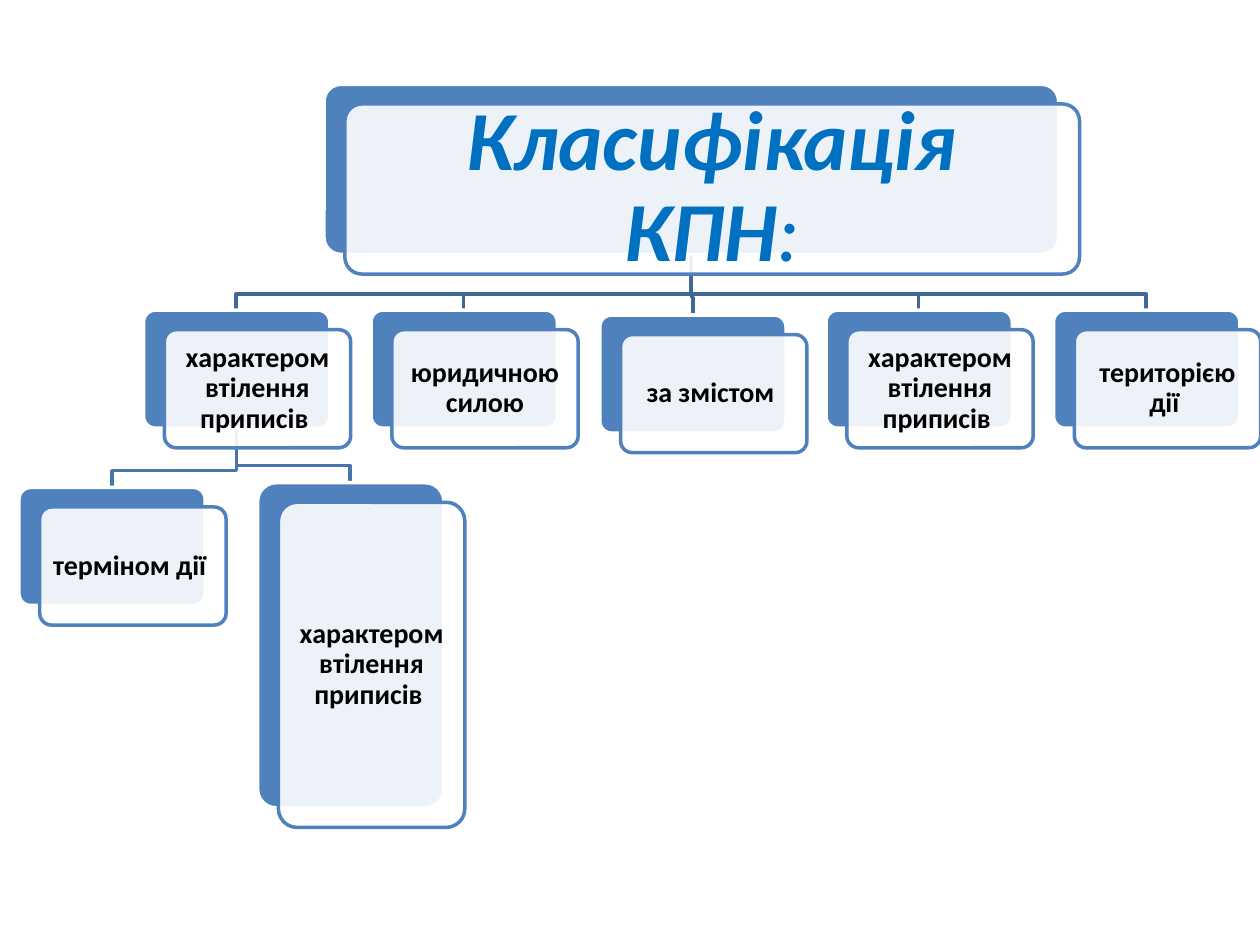
import pptx
import pptx.util
import pptx.dml.color
import pptx.enum.shapes
import pptx.enum.text
import pptx.oxml.ns
import lxml.etree

Pt = pptx.util.Pt
RGB = pptx.dml.color.RGBColor
BLUE = RGB(0x4F, 0x81, 0xBD)
DARK = RGB(0x3F, 0x67, 0x97)
MID = RGB(0x48, 0x75, 0xAC)
TITLE = RGB(0x00, 0x70, 0xC0)
WHITE = RGB(0xFF, 0xFF, 0xFF)
BLACK = RGB(0x00, 0x00, 0x00)

WIDE, HIGH = 106.5, 67.5
SHIFT = (11.9, 11.2)
FIRST, STEP, ROW = 82, 130, 177.2
ROOT = (395.1, 145.4)
KINDS = ["характером втілення приписів ", "юридичною силою", "за змістом ",
         "характером втілення приписів ", "територією дії "]
TERMS = [("терміном дії ", 10.8, 278.5, HIGH),
         ("характером втілення приписів ", 147.2, 275.8, 185.8)]


def apply(item, form):
    for name, value in form.items():
        setattr(item, name, value)


def draw_line(slide, start, end, color):
    (x, y), (to_x, to_y) = start, end
    turn = to_y - 9.7
    path = slide.shapes.build_freeform(x, y, scale=Pt(1))
    path.add_line_segments([(x, turn), (to_x, turn), end], close=False)
    line = path.convert_to_shape()
    line.shadow.inherit = False
    line.fill.background()
    line.line.color.rgb = color
    line.line.width = Pt(2)


def draw_card(slide, place, fill, edge, alpha=None):
    kind = pptx.enum.shapes.MSO_SHAPE.ROUNDED_RECTANGLE
    card = slide.shapes.add_shape(kind, *map(Pt, place))
    card.adjustments[0] = 0.1
    card.shadow.inherit = False
    card.fill.solid()
    card.fill.fore_color.rgb = fill
    card.line.color.rgb = edge
    card.line.width = Pt(2)
    if alpha:
        tint = card.fill._xPr.find(".//" + pptx.oxml.ns.qn("a:srgbClr"))
        node = lxml.etree.SubElement(tint, pptx.oxml.ns.qn("a:alpha"))
        node.set("val", str(alpha * 1000))


def draw_text(slide, place, runs, size, color):
    frame = slide.shapes.add_textbox(*map(Pt, place)).text_frame
    gap = Pt(0.3 * size)
    apply(frame, {"word_wrap": True,
                  "vertical_anchor": pptx.enum.text.MSO_ANCHOR.MIDDLE,
                  "margin_left": gap, "margin_right": gap,
                  "margin_top": gap, "margin_bottom": gap})
    para = frame.paragraphs[0]
    apply(para, {"alignment": pptx.enum.text.PP_ALIGN.CENTER, "line_spacing": 0.9})
    for text, form in runs:
        run = para.add_run()
        run.text = text
        apply(run.font, {"name": "Calibri", "size": Pt(size), **form})
        run.font.color.rgb = color


def draw_node(slide, place, runs, size=16, color=BLACK):
    x, y, wide, high = place
    draw_card(slide, place, BLUE, WHITE)
    x, y = x + SHIFT[0], y + SHIFT[1]
    draw_card(slide, (x, y, wide, high), WHITE, BLUE, 90)
    pad = 0.03 * min(wide, high)
    inner = (x + pad, y + pad, wide - 2 * pad, high - 2 * pad)
    draw_text(slide, inner, runs, size, color)


def main():
    deck = pptx.Presentation()
    apply(deck, {"slide_width": Pt(720), "slide_height": Pt(540)})
    slide = deck.slides.add_slide(deck.slide_layouts[6])

    nodes = [(text, FIRST + STEP * i, ROW, HIGH) for i, text in enumerate(KINDS)]
    text, x, y, high = nodes[2]
    nodes[2] = (text, x + 0.7, y + 2.8, high)
    fork = (FIRST + WIDE / 2, ROW + HIGH)
    for start, group, color in ((ROOT, nodes, DARK), (fork, TERMS, MID)):
        for text, x, y, high in group:
            draw_line(slide, start, (x + WIDE / 2, y), color)

    draw_node(slide, (185.2, 48.2, 419.8, 97.2),
              [("Класифікація КПН", {"bold": True, "italic": True}),
               (":", {"bold": False, "italic": True})], 48, TITLE)
    for text, x, y, high in nodes + TERMS:
        draw_node(slide, (x, y, WIDE, high), [(text, {"bold": True})])
    deck.save("out.pptx")


if __name__ == "__main__":
    main()
